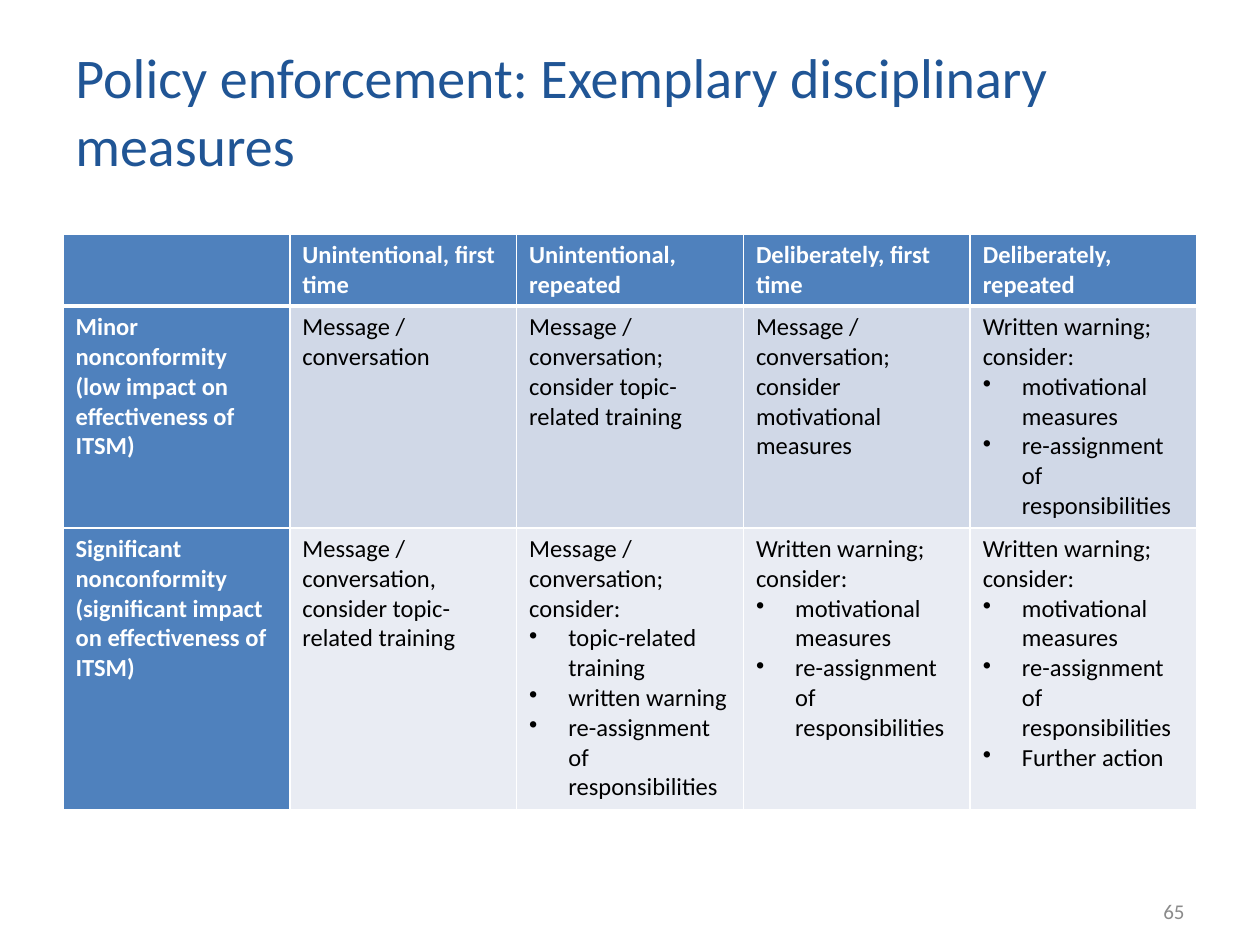
import pptx
import pptx.util
import pptx.dml.color
import pptx.enum.text
import pptx.oxml.ns
from lxml import etree

Cm = pptx.util.Cm
Pt = pptx.util.Pt
Color = pptx.dml.color.RGBColor
Align = pptx.enum.text.PP_ALIGN
qn = pptx.oxml.ns.qn

NAVY = Color(0x20, 0x55, 0x95)
BLUE = Color(0x4F, 0x81, 0xBD)
PALE = Color(0xD0, 0xD8, 0xE7)
LIGHT = Color(0xE9, 0xEC, 0xF3)
WHITE = Color(0xFF, 0xFF, 0xFF)
BLACK = Color(0x00, 0x00, 0x00)
GRAY = Color(0x8B, 0x8B, 0x8B)

FONT = "Calibri"
THIN, THICK = 0.96, 3
INDENT = Cm(0.79)
HEIGHTS = [1.45, 4.47, 5.69]
FILLS = [BLUE, PALE, LIGHT]

MOTIVE = "motivational measures"
ASSIGN = "re-assignment of responsibilities"
WARN = ["Written warning; consider:", MOTIVE, ASSIGN]
ROWS = [
    [
        [],
        ["Unintentional, first time"],
        ["Unintentional, repeated"],
        ["Deliberately, first time"],
        ["Deliberately, repeated"],
    ],
    [
        ["Minor nonconformity (low impact on effectiveness of ITSM)"],
        ["Message / conversation"],
        ["Message / conversation; consider topic-related training"],
        ["Message / conversation; consider motivational measures"],
        WARN,
    ],
    [
        ["Significant nonconformity (significant impact on effectiveness of ITSM)"],
        ["Message / conversation, consider topic-related training"],
        ["Message / conversation; consider:", "topic-related training",
         "written warning", ASSIGN],
        WARN,
        WARN + ["Further action"],
    ],
]


def style(para, size, color, bold=False):
    for run in para.runs:
        font = run.font
        font.name = FONT
        font.size = Pt(size)
        font.bold = bold
        font.color.rgb = color


def add_label(slide, box, text, size, color, align=Align.LEFT):
    frame = slide.shapes.add_textbox(*map(Cm, box)).text_frame
    frame.word_wrap = True
    frame.vertical_anchor = pptx.enum.text.MSO_ANCHOR.MIDDLE
    frame.text = text
    para = frame.paragraphs[0]
    para.alignment = align
    style(para, size, color)


def add_bullet(para, color):
    props = para._p.get_or_add_pPr()
    props.set("marL", str(INDENT))
    props.set("indent", str(-INDENT))
    tint = etree.SubElement(props, qn("a:buClr"))
    etree.SubElement(tint, qn("a:srgbClr")).set("val", str(color))
    etree.SubElement(props, qn("a:buChar")).set("char", "•")


def add_edges(cell, widths):
    props = cell._tc.get_or_add_tcPr()
    for spot, (side, width) in enumerate(widths.items()):
        line = etree.Element(qn(f"a:ln{side}"))
        line.set("w", str(Pt(width)))
        fill = etree.SubElement(line, qn("a:solidFill"))
        etree.SubElement(fill, qn("a:srgbClr")).set("val", str(WHITE))
        props.insert(spot, line)


def fill_cell(cell, lines, row, col):
    head = row == 0 or col == 0
    color = WHITE if head else BLACK
    cell.fill.solid()
    cell.fill.fore_color.rgb = BLUE if head else FILLS[row]
    add_edges(cell, {
        "L": THIN,
        "R": THIN,
        "T": THICK if row == 1 else THIN,
        "B": THICK if row == 0 else THIN,
    })
    cell.text_frame.text = "\n".join(lines)
    for rank, para in enumerate(cell.text_frame.paragraphs):
        if rank:
            add_bullet(para, color)
        style(para, 14, color, head)


def add_grid(slide, box):
    count = len(ROWS[0])
    left, top, width, height = map(Cm, box)
    table = slide.shapes.add_table(len(ROWS), count, left, top, width, height).table
    for col in table.columns:
        col.width = width // count
    for row, lines in enumerate(ROWS):
        table.rows[row].height = Cm(HEIGHTS[row])
        for col, text in enumerate(lines):
            fill_cell(table.cell(row, col), text, row, col)


def main():
    deck = pptx.Presentation()
    deck.slide_width = Cm(25.4)
    deck.slide_height = Cm(19.05)
    slide = deck.slides.add_slide(deck.slide_layouts[6])
    add_label(slide, (1.27, 0.76, 20.42, 2.92),
              "Policy enforcement: Exemplary disciplinary measures", 32, NAVY)
    add_grid(slide, (1.27, 4.72, 22.86, sum(HEIGHTS)))
    add_label(slide, (18.21, 17.86, 5.92, 1.02), "65", 12, GRAY, Align.RIGHT)
    deck.save("out.pptx")


if __name__ == "__main__":
    main()
